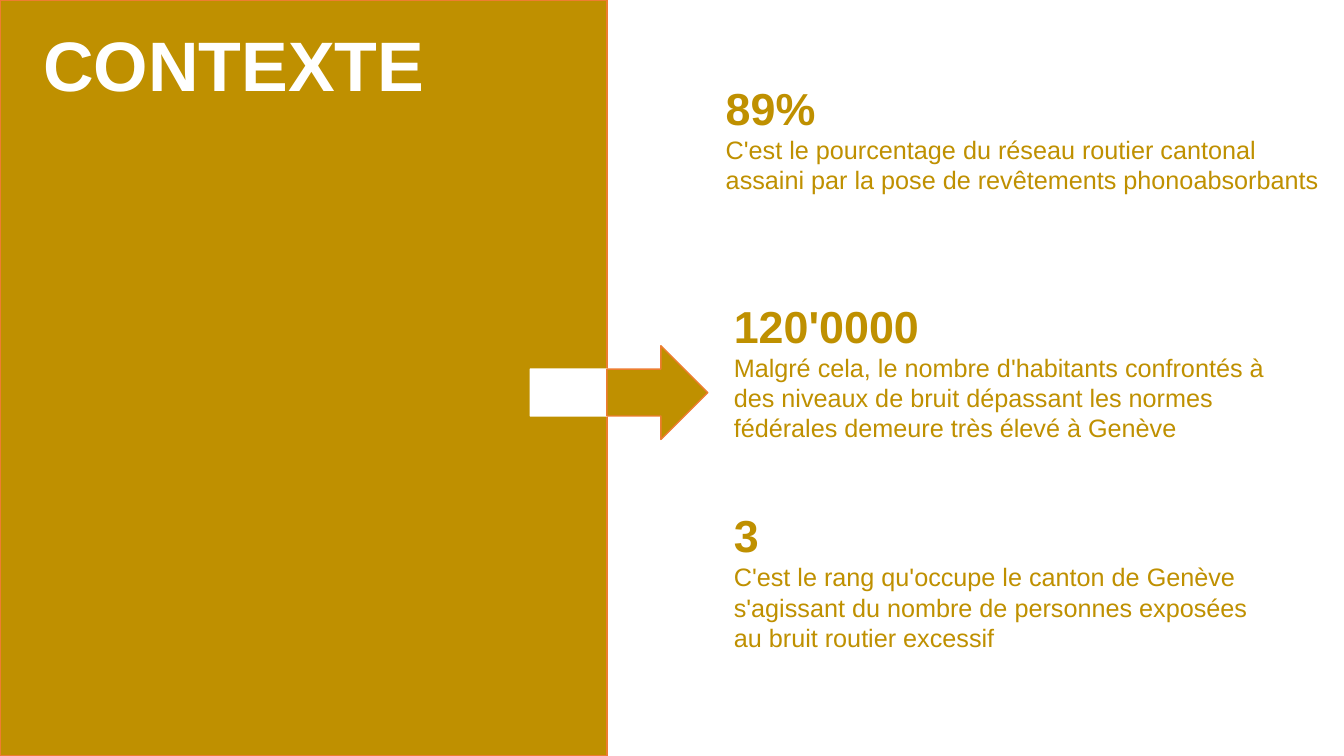
from dataclasses import dataclass

from pptx import Presentation
from pptx.dml.color import RGBColor
from pptx.enum.shapes import MSO_SHAPE
from pptx.enum.text import MSO_ANCHOR, MSO_AUTO_SIZE, PP_ALIGN
from pptx.util import Inches, Pt

RECTANGLE = MSO_SHAPE.RECTANGLE
RIGHT_ARROW = MSO_SHAPE.RIGHT_ARROW
TOP = MSO_ANCHOR.TOP
LEFT = PP_ALIGN.LEFT
GROW = MSO_AUTO_SIZE.SHAPE_TO_FIT_TEXT
TITLE_ONLY = 5


@dataclass(frozen=True)
class Theme:
    """Colours, font and type sizes of the slide."""

    gold: RGBColor = RGBColor(0xBF, 0x90, 0x00)
    orange: RGBColor = RGBColor(0xED, 0x7D, 0x31)
    white: RGBColor = RGBColor(0xFF, 0xFF, 0xFF)
    font: str = "Arial"
    title: int = 50
    figure: int = 32
    body: int = 18


class SlideBuilder:
    """Draws styled elements on one page."""

    def __init__(self, page, theme):
        """Keep the page and its theme."""
        self.page = page
        self.theme = theme

    def fill_text(self, box, lines, color):
        """Fill a box with (text, size, bold) paragraphs."""
        frame = box.text_frame
        frame_format = {"word_wrap": True, "auto_size": GROW, "vertical_anchor": TOP}
        for name, value in frame_format.items():
            setattr(frame, name, value)
        for index, (text, size, bold) in enumerate(lines):
            para = frame.add_paragraph() if index else frame.paragraphs[0]
            para_format = {"alignment": LEFT, "line_spacing": 1.0, "space_before": Pt(0)}
            for name, value in para_format.items():
                setattr(para, name, value)
            span = para.add_run()
            span.text = text
            span.font.color.rgb = color
            span_format = {"name": self.theme.font, "size": Pt(size), "bold": bold}
            for name, value in span_format.items():
                setattr(span.font, name, value)

    def title(self, text, left, top, width, height):
        """Place and format the title placeholder."""
        box = self.page.shapes.title
        place = {"left": left, "top": top, "width": width, "height": height}
        for name, value in place.items():
            setattr(box, name, Inches(value))
        self.fill_text(box, [(text, self.theme.title, True)], self.theme.white)

    def shape(self, kind, left, top, width, height, fill, line):
        """Add a filled and outlined preset shape."""
        shape = self.page.shapes.add_shape(
            kind, Inches(left), Inches(top), Inches(width), Inches(height)
        )
        shape.shadow.inherit = False
        shape.fill.solid()
        shape.fill.fore_color.rgb = fill
        shape.line.color.rgb = line
        shape.line.width = Pt(1)
        return shape

    def backdrop(self, width, height):
        """Add the gold panel behind the title."""
        panel = self.shape(
            RECTANGLE, 0, 0, width, height, self.theme.gold, self.theme.orange
        )
        self.page.shapes.title.element.addprevious(panel.element)

    def key_figure(self, left, top, width, height, figure, text):
        """Add a large figure with its explanation below."""
        box = self.page.shapes.add_textbox(
            Inches(left), Inches(top), Inches(width), Inches(height)
        )
        lines = [(figure, self.theme.figure, True), (text, self.theme.body, False)]
        self.fill_text(box, lines, self.theme.gold)


KEY_FIGURES = [
    (7.1, 0.75, 6.1, 1.25, "89%",
     "C'est le pourcentage du réseau routier cantonal assaini par la pose de "
     "revêtements phonoabsorbants"),
    (7.18, 2.91, 5.9, 1.55, "120'0000",
     "Malgré cela, le nombre d'habitants confrontés à des niveaux de bruit "
     "dépassant les normes fédérales demeure très élevé à Genève"),
    (7.18, 4.99, 5.52, 1.55, "3",
     "C'est le rang qu'occupe le canton de Genève s'agissant du nombre de "
     "personnes exposées au bruit routier excessif"),
]
PANEL_WIDTH = 6.02
ARROW_TOP, ARROW_HEIGHT, ARROW_TIP = 3.43, 0.93, 7.02


def main():
    """Build the slide and save it."""
    deck = Presentation()
    deck.slide_width, deck.slide_height = Inches(13.33), Inches(7.5)
    theme = Theme()
    page = deck.slides.add_slide(deck.slide_layouts[TITLE_ONLY])
    builder = SlideBuilder(page, theme)
    builder.title("CONTEXTE", 0.33, 0.16, 4.83, 0.94)
    builder.backdrop(PANEL_WIDTH, 7.5)
    arrows = [(5.26, theme.white, theme.white), (PANEL_WIDTH, theme.gold, theme.orange)]
    for left, fill, line in arrows:
        builder.shape(
            RIGHT_ARROW, left, ARROW_TOP, ARROW_TIP - left, ARROW_HEIGHT, fill, line
        )
    for key_figure in KEY_FIGURES:
        builder.key_figure(*key_figure)
    deck.save("out.pptx")


if __name__ == "__main__":
    main()
